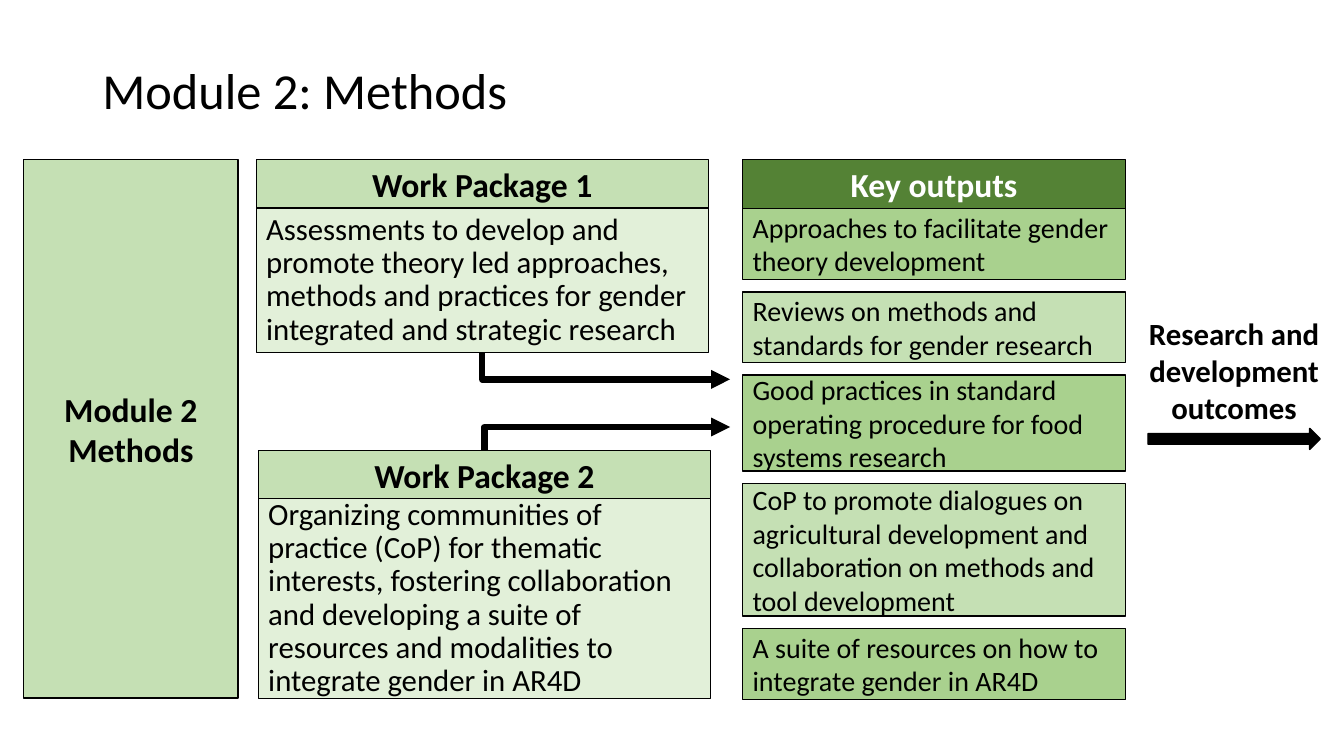
from dataclasses import dataclass
from lxml.etree import SubElement
from pptx import Presentation
from pptx.dml.color import RGBColor
from pptx.enum.shapes import MSO_CONNECTOR, MSO_SHAPE
from pptx.enum.text import MSO_ANCHOR, PP_ALIGN
from pptx.oxml.ns import qn
from pptx.util import Pt


@dataclass(frozen=True)
class Theme:
    font: str = "Calibri"
    black: str = "000000"
    white: str = "FFFFFF"
    dark: str = "548235"
    mid: str = "A9D18E"
    light: str = "C5E0B4"
    pale: str = "E2F0D9"
    title: int = 36
    head: int = 24
    body: int = 22
    small: int = 20
    edge: float = 1
    link: float = 4.5


THEME = Theme()

PACKS = [
    (183, 114, 34.5, 103.5, "Work Package 1",
     "Assessments to develop and promote theory led approaches, methods "
     "and practices for gender integrated and strategic research"),
    (184.5, 322, 34, 143, "Work Package 2",
     "Organizing communities of practice (CoP) for thematic interests, "
     "fostering collaboration and developing a suite of resources and "
     "modalities to integrate gender in AR4D"),
]

OUTPUTS = [
    (50.5, "Approaches to facilitate gender theory development"),
    (50.5, "Reviews on methods and standards for gender research"),
    (68.5, "Good practices in standard operating procedure for food "
           "systems research"),
    (94.5, "CoP to promote dialogues on agricultural development and "
           "collaboration on methods and tool development"),
    (50.5, "A suite of resources on how to integrate gender in AR4D"),
]


def paint(color):
    return RGBColor.from_string(color)


def write(shape, text, size, color=THEME.black, bold=False,
          align=PP_ALIGN.LEFT, anchor=MSO_ANCHOR.MIDDLE, pitch=1.0):
    frame = shape.text_frame
    frame.word_wrap = True
    frame.vertical_anchor = anchor
    frame.text = text
    for para in frame.paragraphs:
        para.alignment = align
        para.line_spacing = pitch
        for run in para.runs:
            run.font.name = THEME.font
            run.font.size = Pt(size)
            run.font.bold = bold
            run.font.color.rgb = paint(color)


def label(slide, box, text, size, **style):
    shape = slide.shapes.add_textbox(*map(Pt, box))
    write(shape, text, size, **style)


def block(slide, box, fill, kind=MSO_SHAPE.RECTANGLE):
    shape = slide.shapes.add_shape(kind, *map(Pt, box))
    shape.shadow.inherit = False
    shape.fill.solid()
    shape.fill.fore_color.rgb = paint(fill)
    shape.line.color.rgb = paint(THEME.black)
    shape.line.width = Pt(THEME.edge)
    return shape


def header(slide, box, fill, text, color=THEME.black):
    shape = block(slide, box, fill)
    write(shape, text, THEME.head, color, True, PP_ALIGN.CENTER)
    return shape


def package(slide, left, top, cap, deep, name, text):
    wide = 323
    head = header(slide, (left, top, wide, cap), THEME.light, name)
    body = block(slide, (left, top + cap, wide, deep), THEME.pale)
    write(body, text, THEME.body, pitch=0.9)
    return head, body


def elbow(slide, shape, site, start, end):
    (x1, y1), (x2, y2) = start, end
    wide, high = abs(y2 - y1), x2 - x1
    link = slide.shapes.add_connector(MSO_CONNECTOR.ELBOW, 0, 0, 0, 0)
    link.begin_connect(shape, site)
    link.left = Pt((x1 + x2 - wide) / 2)
    link.top = Pt((y1 + y2 - high) / 2)
    link.width, link.height = Pt(wide), Pt(high)
    link.line.color.rgb = paint(THEME.black)
    link.line.width = Pt(THEME.link)
    props = link.element.spPr
    frame = props.find(qn("a:xfrm"))
    frame.set("rot", "16200000")
    frame.set("flipH", "1" if y2 > y1 else "0")
    frame.set("flipV", "0")
    props.find(qn("a:prstGeom")).set("prst", "bentConnector2")
    SubElement(props.find(qn("a:ln")), qn("a:tailEnd"), type="triangle")
    SubElement(props, qn("a:effectLst"))


def outputs(slide):
    left, top, wide, gap = 530.5, 149, 273.5, 9
    header(slide, (left, 114, wide, 35), THEME.dark, "Key outputs",
           THEME.white)
    for i, (high, text) in enumerate(OUTPUTS):
        fill = THEME.light if i % 2 else THEME.mid
        write(block(slide, (left, top, wide, high), fill), text, THEME.small)
        top += high + gap


def main():
    deck = Presentation()
    deck.slide_width, deck.slide_height = Pt(960), Pt(540)
    slide = deck.slides.add_slide(deck.slide_layouts[6])
    label(slide, (66, 14.5, 828, 104.5), "Module 2: Methods", THEME.title,
          pitch=0.9)
    header(slide, (17, 114, 153, 384.5), THEME.light, "Module 2\nMethods")
    (_, first), (second, _) = [package(slide, *pack) for pack in PACKS]
    outputs(slide)
    elbow(slide, first, 2, (344.5, 252), (521.5, 271))
    elbow(slide, second, 0, (346, 322), (521.5, 305))
    label(slide, (806.5, 221, 150, 87), "Research and development outcomes",
          THEME.body, bold=True, align=PP_ALIGN.CENTER, anchor=MSO_ANCHOR.TOP)
    block(slide, (820, 306, 123, 15), THEME.black, MSO_SHAPE.RIGHT_ARROW)
    deck.save("out.pptx")


if __name__ == "__main__":
    main()
